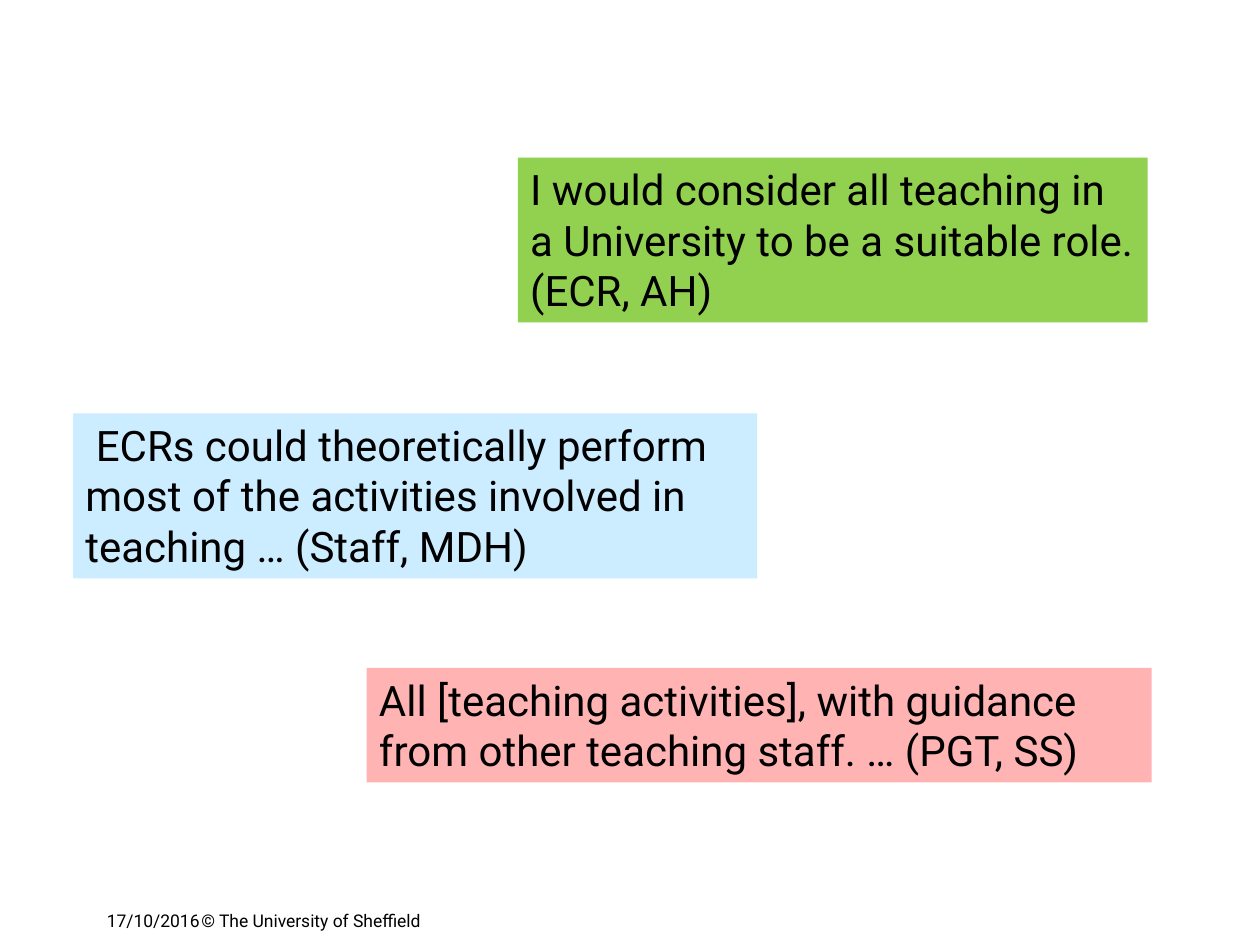
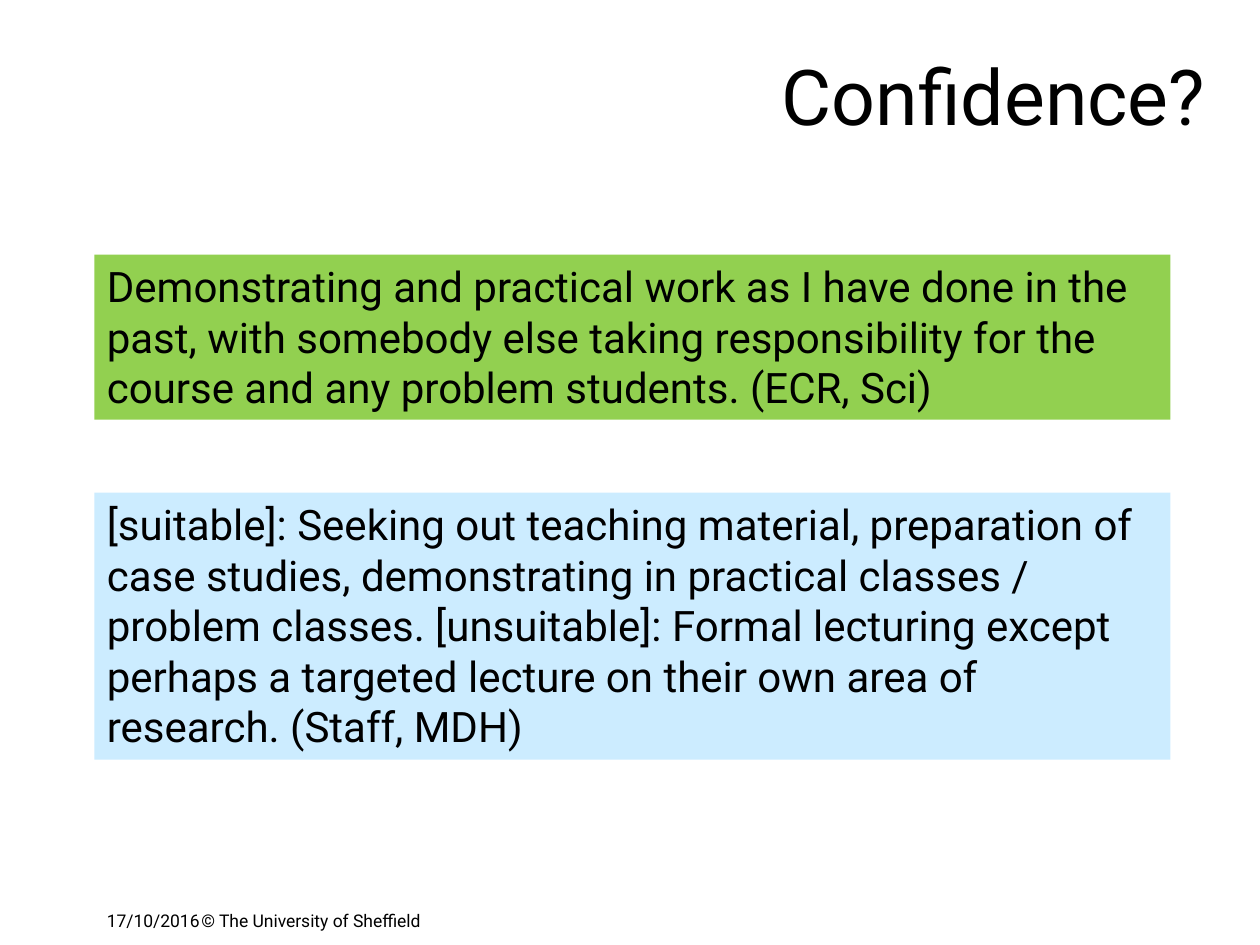
from pptx import Presentation
from pptx.dml.color import RGBColor
from pptx.enum.shapes import MSO_SHAPE
from pptx.enum.text import MSO_ANCHOR, MSO_AUTO_SIZE, PP_ALIGN
from pptx.util import Inches, Pt

RECT = MSO_SHAPE.RECTANGLE
TOP, MIDDLE = MSO_ANCHOR.TOP, MSO_ANCHOR.MIDDLE
LEFT, RIGHT = PP_ALIGN.LEFT, PP_ALIGN.RIGHT
GROW, FIXED = MSO_AUTO_SIZE.SHAPE_TO_FIT_TEXT, MSO_AUTO_SIZE.NONE

BLACK = RGBColor(0x00, 0x00, 0x00)
GREEN = RGBColor(0x92, 0xD0, 0x50)
BLUE = RGBColor(0xCC, 0xEC, 0xFF)
PINK = RGBColor(0xFF, 0xB3, 0xB3)

FONT = "Roboto"
TITLE_ONLY, BLANK = 5, 6
MARGIN = 0.75
FOOT_TOP, FOOT_HIGH = 7.17, 0.33
WIDE = 8.54
HIGH_2, HIGH_3, HIGH_5 = 0.91, 1.31, 2.12  # box heights by line count


def write(shape, text, size, align=LEFT, anchor=TOP, fit=FIXED):
    """Put one styled paragraph into a shape and return the paragraph."""
    frame = shape.text_frame
    frame.word_wrap = True
    frame.auto_size = fit
    frame.vertical_anchor = anchor
    para = frame.paragraphs[0]
    para.alignment = align
    run = para.add_run()
    run.text = text
    run.font.name = FONT
    run.font.size = Pt(size)
    run.font.color.rgb = BLACK
    return para


def add_foot(slide):
    notes = [
        (MARGIN, 1, "17/10/2016"),
        (1.5, 5.67, "© The University of Sheffield"),
    ]
    for left, width, text in notes:
        box = slide.shapes.add_textbox(
            Inches(left), Inches(FOOT_TOP), Inches(width), Inches(FOOT_HIGH))
        write(box, text, 10)


def add_title(slide, text):
    title = slide.shapes.title
    title.left, title.top = Inches(0.67), Inches(0.4)
    title.width, title.height = Inches(9), Inches(0.83)
    para = write(title, text, 44, RIGHT, MIDDLE)
    para.line_spacing = 0.83


def add_quote(slide, left, top, width, height, fill, text):
    box = slide.shapes.add_shape(
        RECT, Inches(left), Inches(top), Inches(width), Inches(height))
    box.shadow.inherit = False
    box.fill.solid()
    box.fill.fore_color.rgb = fill
    box.line.fill.background()
    write(box, text, 24, fit=GROW)


def add_page(deck, layout):
    slide = deck.slides.add_slide(deck.slide_layouts[layout])
    add_foot(slide)
    return slide


def build_roles(deck):
    slide = add_page(deck, BLANK)
    add_quote(slide, 4.11, 1.25, 5, HIGH_3, GREEN,
              "I would consider all teaching in a University to be a "
              "suitable role. (ECR, AH)")
    add_quote(slide, 0.58, 3.28, 5.43, HIGH_3, BLUE,
              " ECRs could theoretically perform most of the activities "
              "involved in teaching … (Staff, MDH)")
    add_quote(slide, 2.91, 5.3, 6.23, HIGH_2, PINK,
              "All [teaching activities], with guidance from other "
              "teaching staff. … (PGT, SS)")


def build_trust(deck):
    slide = add_page(deck, TITLE_ONLY)
    add_title(slide, "Confidence?")
    add_quote(slide, MARGIN, 2.02, WIDE, HIGH_3, GREEN,
              "Demonstrating and practical work as I have done in the past, "
              "with somebody else taking responsibility for the course and "
              "any problem students. (ECR, Sci)")
    add_quote(slide, MARGIN, 3.91, WIDE, HIGH_5, BLUE,
              "[suitable]: Seeking out teaching material, preparation of "
              "case studies, demonstrating in practical classes / problem "
              "classes. [unsuitable]: Formal lecturing except perhaps a "
              "targeted lecture on their own area of research. (Staff, MDH)")


def main():
    deck = Presentation()
    deck.slide_width, deck.slide_height = Inches(10), Inches(7.5)
    build_roles(deck)
    build_trust(deck)
    deck.save("out.pptx")


if __name__ == "__main__":
    main()
